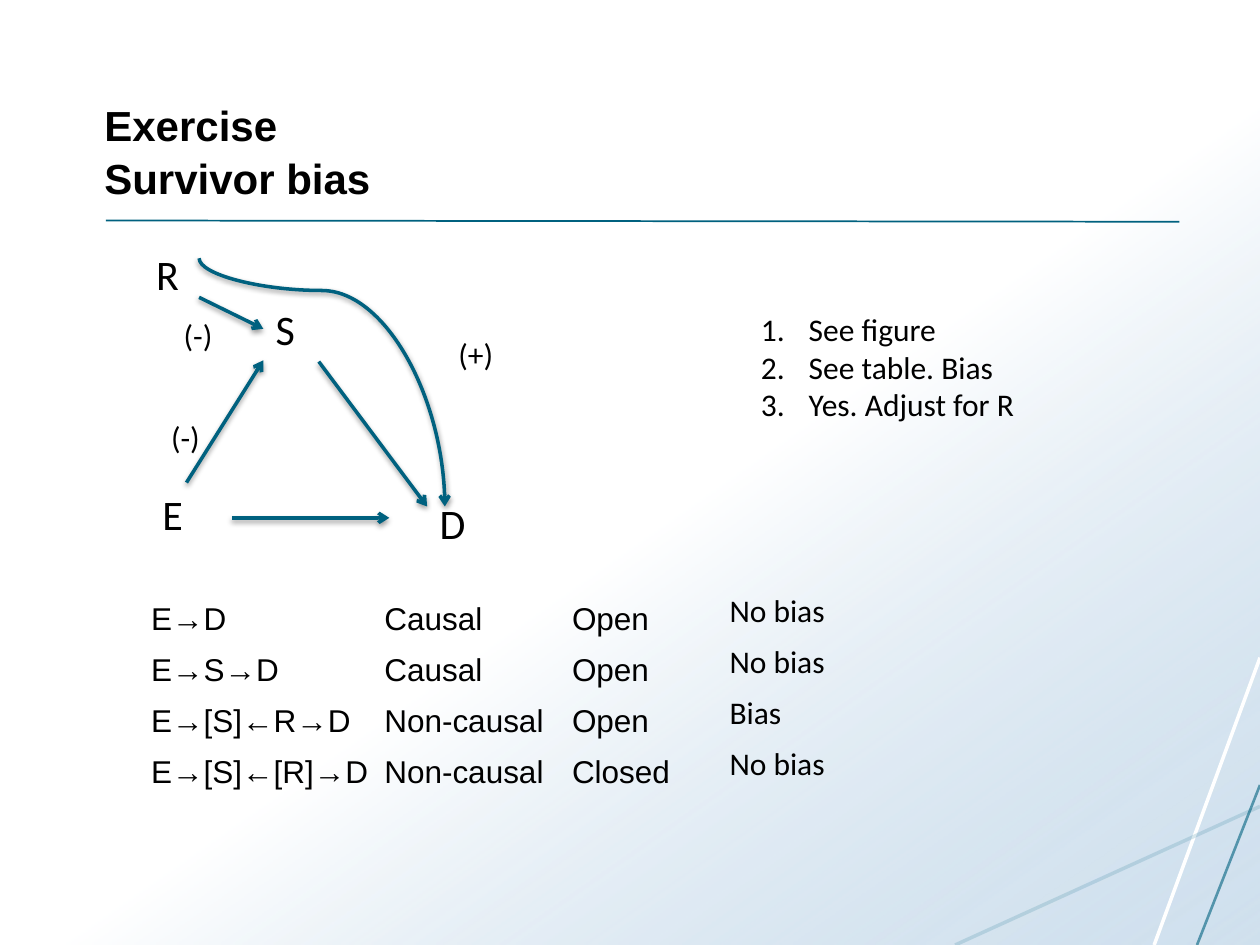
from lxml import etree
from pptx import Presentation
from pptx import util as u
from pptx.dml.color import RGBColor
from pptx.enum import shapes, text
from pptx.oxml import parse_xml
from pptx.oxml.ns import nsdecls, qn

COLORS = {"ink": "000000", "paper": "FFFFFF", "teal": "00617F", "haze": "A9C7E0", "mist": "15718F"}
PLAIN_TABLE = "{2D5ABB26-0587-4C30-8999-92F81FD0307C}"
LABEL = {"name": "Calibri", "size": u.Pt(18)}
NODE = {"name": "Calibri", "size": u.Pt(24)}
TITLE = {"name": "Arial", "size": u.Pt(24), "bold": True}
PATH = {"name": "Arial", "size": u.Pt(18)}
TIGHT = {"margin_left": u.Inches(0.01), "margin_right": u.Inches(0.01),
         "margin_top": u.Inches(0.01), "margin_bottom": 0,
         "vertical_anchor": text.MSO_ANCHOR.BOTTOM}


def rgb(name):
    """Look up a palette colour."""
    return RGBColor.from_string(COLORS[name])


def apply(target, values):
    """Set each attribute in values on target."""
    for key, value in values.items():
        setattr(target, key, value)


def write(paragraph, words, font):
    """Put words in a paragraph and format them."""
    paragraph.text = words
    apply(paragraph.font, font)
    paragraph.font.color.rgb = rgb("ink")


def set_opacity(parent, percent):
    """Make the last colour inside parent partly transparent."""
    color = list(parent.iter(qn("a:srgbClr")))[-1]
    etree.SubElement(color, qn("a:alpha"), val=str(percent * 1000))


def add_label(slide, box, lines, font, numbered=False, anchor=text.MSO_ANCHOR.TOP):
    """Add a text box with one paragraph per line."""
    frame = slide.shapes.add_textbox(*map(u.Inches, box)).text_frame
    apply(frame, {"word_wrap": True, "vertical_anchor": anchor})
    for index, line in enumerate(lines):
        paragraph = frame.paragraphs[0] if index == 0 else frame.add_paragraph()
        write(paragraph, line, font)
        if numbered:
            props = paragraph._p.get_or_add_pPr()
            apply_indent = u.Inches(0.38)
            props.set("marL", str(apply_indent))
            props.set("indent", str(-apply_indent))
            number = parse_xml(f'<a:buAutoNum {nsdecls("a")} type="arabicPeriod"/>')
            props.insert_element_before(number, "a:tabLst", "a:defRPr", "a:extLst")
    return frame


def add_line(slide, ends, color="teal", width=2, opacity=100, kind=shapes.MSO_CONNECTOR.STRAIGHT):
    """Add a shadowless connector between two points."""
    line = slide.shapes.add_connector(kind, *map(u.Inches, ends))
    line.line.color.rgb = rgb(color)
    line.line.width = u.Pt(width)
    if opacity < 100:
        set_opacity(line.line._ln, opacity)
    etree.SubElement(line._element.spPr, qn("a:effectLst"))
    return line


def add_arrow(slide, ends, **options):
    """Add a connector with an open head and a soft shadow below."""
    arrow = add_line(slide, ends, **options)
    etree.SubElement(arrow.line._ln, qn("a:tailEnd"), type="arrow")
    effects = arrow._element.spPr.find(qn("a:effectLst"))
    shadow = etree.SubElement(effects, qn("a:outerShdw"), blurRad=str(u.Pt(3.1)),
                              dist=str(u.Pt(1.6)), dir="5400000", rotWithShape="0")
    etree.SubElement(shadow, qn("a:srgbClr"), val=COLORS["ink"])
    set_opacity(shadow, 38)
    return arrow


def add_curved_arrow(slide, ends, bend):
    """Add a curved arrow that leaves and arrives vertically."""
    curve = add_arrow(slide, ends, kind=shapes.MSO_CONNECTOR.CURVE)
    props = curve._element.spPr
    props.find(qn("a:xfrm")).set("rot", "16200000")
    guides = props.find(qn("a:prstGeom")).find(qn("a:avLst"))
    etree.SubElement(guides, qn("a:gd"), name="adj1", fmla=f"val {bend}")


def add_backdrop(slide):
    """Add the gradient wash and the decorative lines."""
    wash = slide.shapes.add_shape(shapes.MSO_SHAPE.RECTANGLE, 0, 0, u.Inches(10), u.Inches(7.5))
    wash.shadow.inherit = False
    wash.line.fill.background()
    wash.fill.gradient()
    wash.fill.gradient_angle = 305
    for stop, position, color in zip(wash.fill.gradient_stops, (0.54, 1), ("paper", "haze")):
        stop.position = position
        stop.color.rgb = rgb(color)
    set_opacity(wash._element.spPr, 54)
    add_line(slide, (10, 5.22, 9.16, 7.5), "paper")
    add_line(slide, (10, 6.4, 7.58, 7.5), "mist", opacity=16)
    add_line(slide, (10, 6.23, 9.5, 7.5), width=1.5, opacity=60)
    add_line(slide, (0.84, 1.75, 9.36, 1.76), width=1)


def add_diagram(slide):
    """Add the causal graph with its nodes, signs and arrows."""
    for node, left, top, width in (("S", 2.09, 2.36, 0.44), ("E", 1.19, 3.83, 0.59),
                                   ("D", 3.39, 3.9, 0.59), ("R", 1.14, 1.92, 0.44)):
        add_label(slide, (left, top, width, 0.5), [node], NODE)
    for ends in ((1.48, 3.83, 2.09, 2.86), (1.84, 4.11, 3.09, 4.11),
                 (1.58, 2.36, 2.09, 2.61), (2.53, 2.87, 3.39, 4.02)):
        add_arrow(slide, ends)
    add_curved_arrow(slide, (3.54, 2.06, 1.57, 4.01), 13000)
    for sign, left, top, width in (("(-)", 1.36, 2.46, 0.64), ("(+)", 3.54, 2.61, 0.73),
                                   ("(-)", 1.26, 3.27, 0.64)):
        add_label(slide, (left, top, width, 0.4), [sign], LABEL)


def add_path_table(slide, rows, widths):
    """Add the table that classifies each path."""
    frame = slide.shapes.add_table(len(rows), len(widths), *map(u.Inches, (1.19, 4.65, 6.67, 1.62)))
    table = frame.table
    apply(table, {"first_row": False, "horz_banding": False})
    table._tbl.tblPr.find(qn("a:tableStyleId")).text = PLAIN_TABLE
    for column, width in zip(table.columns, widths):
        column.width = u.Inches(width)
    for row, values in enumerate(rows):
        for col, value in enumerate(values):
            cell = table.cell(row, col)
            cell.fill.background()
            verdict = col == len(widths) - 1
            write(cell.text_frame.paragraphs[0], value, LABEL if verdict else PATH)
            if not verdict:
                apply(cell, TIGHT)


def main():
    """Build the survivor bias slide."""
    deck = Presentation()
    apply(deck, {"slide_width": u.Inches(10), "slide_height": u.Inches(7.5)})
    slide = deck.slides.add_slide(deck.slide_layouts[6])
    add_backdrop(slide)
    title = add_label(slide, (0.73, 0.33, 8.62, 1.33), ["Exercise\vSurvivor bias"], TITLE,
                      anchor=text.MSO_ANCHOR.BOTTOM)
    title.paragraphs[0].line_spacing = 1.05
    add_diagram(slide)
    add_label(slide, (5.94, 2.41, 3.41, 1.31),
              ["See figure", "See table. Bias", "Yes. Adjust for R"], LABEL, numbered=True)
    add_path_table(slide, [
        ("E→D", "Causal", "Open", "No bias"),
        ("E→S→D", "Causal", "Open", "No bias"),
        ("E→[S]←R→D", "Non-causal", "Open", "Bias"),
        ("E→[S]←[R]→D", "Non-causal", "Closed", "No bias"),
    ], (1.85, 1.49, 1.16, 2.17))
    deck.save("out.pptx")


if __name__ == "__main__":
    main()
